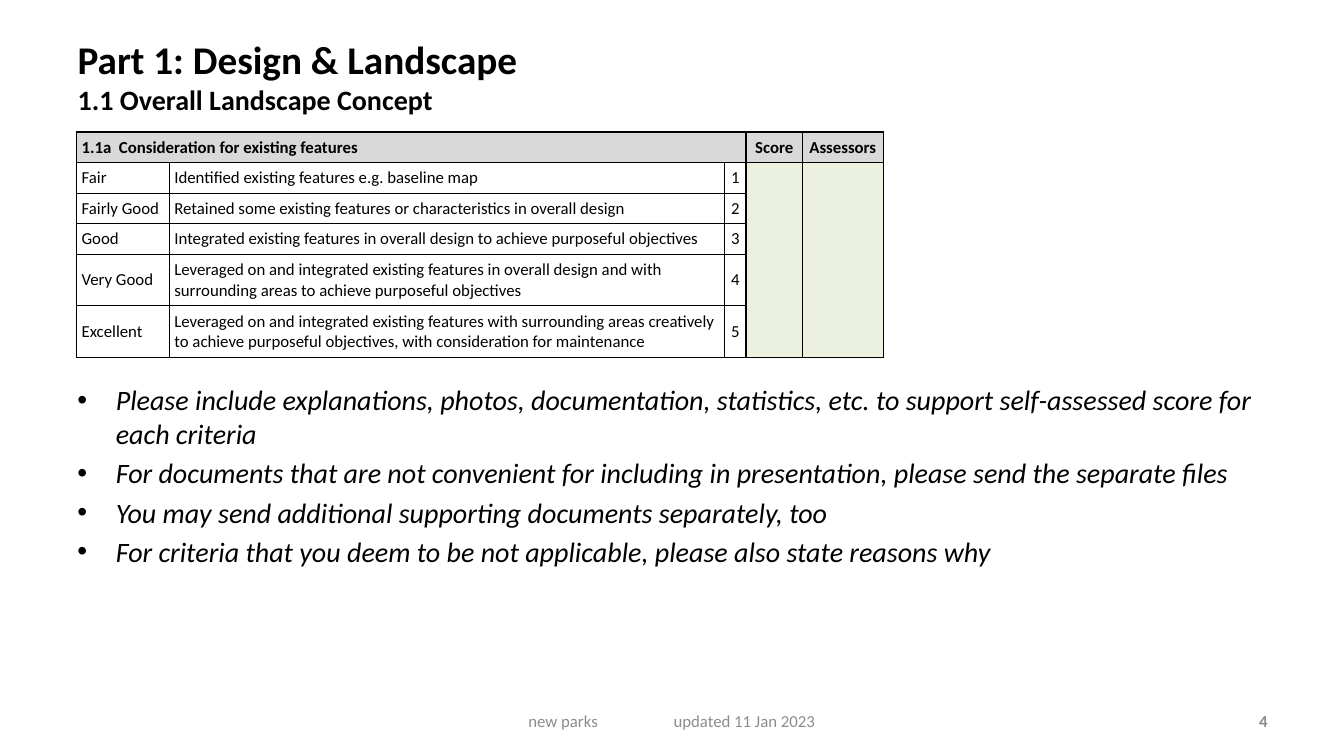
from dataclasses import dataclass
from typing import Any

import lxml.etree
import pptx
import pptx.dml.color
import pptx.enum.text
import pptx.oxml.ns
import pptx.util

Inches = pptx.util.Inches
Pt = pptx.util.Pt
Align = pptx.enum.text.PP_ALIGN
Anchor = pptx.enum.text.MSO_ANCHOR
qn = pptx.oxml.ns.qn


@dataclass(frozen=True)
class Theme:
    font: str = "Calibri"
    ink: str = "000000"
    muted: str = "8C8C8C"
    header_fill: str = "D9D9D9"
    score_fill: str = "EBF1DE"
    title_size: int = 28
    body_size: int = 20
    small_size: int = 12


@dataclass(frozen=True)
class Box:
    left: float
    top: float
    width: float
    height: float

    def lengths(self) -> tuple:
        return tuple(Inches(n) for n in (self.left, self.top, self.width, self.height))


@dataclass(frozen=True)
class Grade:
    label: str
    meaning: str
    score: int
    height: float = 0.3


THEME = Theme()
COLUMNS = (0.92, 5.51, 0.21, 0.56, 0.8)
HEADINGS = {0: "1.1a  Consideration for existing features", 3: "Score", 4: "Assessors"}
SCORE_COLUMNS = (3, 4)
HEADER_HEIGHT = 0.3
TWO_LINES = 0.51
GRADES = (
    Grade("Fair", "Identified existing features e.g. baseline map", 1),
    Grade("Fairly Good", "Retained some existing features or characteristics in overall design", 2),
    Grade("Good", "Integrated existing features in overall design to achieve purposeful objectives", 3),
    Grade("Very Good", "Leveraged on and integrated existing features in overall design and with "
          "surrounding areas to achieve purposeful objectives", 4, TWO_LINES),
    Grade("Excellent", "Leveraged on and integrated existing features with surrounding areas creatively "
          "to achieve purposeful objectives, with consideration for maintenance", 5, TWO_LINES),
)
INSTRUCTIONS = (
    "Please include explanations, photos, documentation, statistics, etc. "
    "to support self-assessed score for each criteria",
    "For documents that are not convenient for including in presentation, please send the separate files",
    "You may send additional supporting documents separately, too",
    "For criteria that you deem to be not applicable, please also state reasons why",
)


def apply(target: Any, values: dict) -> None:
    for name, value in values.items():
        setattr(target, name, value)


def add_span(para: Any, text: str, size: int, color: str = THEME.ink, **style: bool) -> None:
    span = para.add_run()
    span.text = text
    apply(span.font, {"name": THEME.font, "size": Pt(size), **style})
    span.font.color.rgb = pptx.dml.color.RGBColor.from_string(color)


def add_text_frame(page: Any, box: Box, **values: Any) -> Any:
    frame = page.shapes.add_textbox(*box.lengths()).text_frame
    apply(frame, {"word_wrap": True, **values})
    return frame


def add_title(page: Any, box: Box) -> None:
    title = page.shapes.title
    apply(title, dict(zip(("left", "top", "width", "height"), box.lengths())))
    apply(title.text_frame, {"vertical_anchor": Anchor.TOP, "word_wrap": True,
                             "auto_size": pptx.enum.text.MSO_AUTO_SIZE.NONE})
    para = title.text_frame.paragraphs[0]
    para.alignment = Align.LEFT
    add_span(para, "Part 1: Design & Landscape", THEME.title_size, bold=True)
    para.add_line_break()
    add_span(para, "1.1 Overall Landscape Concept", THEME.body_size, bold=True)


def add_borders(cell: Any) -> None:
    properties = cell._tc.get_or_add_tcPr()
    for side in ("lnL", "lnR", "lnT", "lnB"):
        line = lxml.etree.SubElement(properties, qn(f"a:{side}"), w=str(Pt(1)))
        fill = lxml.etree.SubElement(line, qn("a:solidFill"))
        lxml.etree.SubElement(fill, qn("a:srgbClr"), val=THEME.ink)


def fill_cell(cell: Any, text: str, color: str, align: Any, bold: bool) -> None:
    margins = ("margin_left", "margin_top", "margin_right", "margin_bottom")
    apply(cell, {"vertical_anchor": Anchor.MIDDLE, **dict.fromkeys(margins, Inches(0.05))})
    add_borders(cell)
    if color:
        cell.fill.solid()
        cell.fill.fore_color.rgb = pptx.dml.color.RGBColor.from_string(color)
    else:
        cell.fill.background()
    para = cell.text_frame.paragraphs[0]
    para.alignment = align
    if text:
        add_span(para, text, THEME.small_size, bold=bold)
    else:
        # An empty cell takes its line height from the end mark
        para._p.get_or_add_endParaRPr().set("sz", str(THEME.small_size * 100))


def add_grade_table(page: Any, box: Box) -> None:
    heights = (HEADER_HEIGHT, *(grade.height for grade in GRADES))
    table = page.shapes.add_table(len(heights), len(COLUMNS), *box.lengths()).table
    apply(table, {"first_row": False, "horz_banding": False})
    for column, width in zip(table.columns, COLUMNS):
        column.width = Inches(width)
    for row, height in zip(table.rows, heights):
        row.height = Inches(height)

    for index in range(len(COLUMNS)):
        align = Align.CENTER if index >= 2 else Align.LEFT
        fill_cell(table.cell(0, index), HEADINGS.get(index, ""), THEME.header_fill, align, True)
        color = THEME.score_fill if index in SCORE_COLUMNS else ""
        for number, grade in enumerate(GRADES, 1):
            texts = (grade.label, grade.meaning, str(grade.score), "", "")
            fill_cell(table.cell(number, index), texts[index], color, align, False)

    table.cell(0, 0).merge(table.cell(0, 2))
    for index in SCORE_COLUMNS:
        table.cell(1, index).merge(table.cell(len(GRADES), index))


def add_instructions(page: Any, box: Box) -> None:
    frame = add_text_frame(page, box, margin_right=Inches(0.2))
    for number, text in enumerate(INSTRUCTIONS):
        para = frame.add_paragraph() if number else frame.paragraphs[0]
        properties = para._p.get_or_add_pPr()
        properties.set("marL", str(Inches(0.38)))
        properties.set("indent", str(-Inches(0.38)))
        lxml.etree.SubElement(properties, qn("a:buFont"), typeface="Arial")
        lxml.etree.SubElement(properties, qn("a:buChar"), char="•")
        if number:
            para.space_before = Pt(4)
        add_span(para, text, THEME.body_size, italic=True)


def add_footer(page: Any, box: Box) -> None:
    frame = add_text_frame(page, box, vertical_anchor=Anchor.MIDDLE, margin_left=Inches(0.68))
    para = frame.paragraphs[0]
    tabs = lxml.etree.SubElement(para._p.get_or_add_pPr(), qn("a:tabLst"))
    lxml.etree.SubElement(tabs, qn("a:tab"), pos=str(Inches(1.44)), algn="l")
    add_span(para, "new parks\tupdated 11 Jan 2023", THEME.small_size, THEME.muted)


def add_page_number(page: Any, box: Box) -> None:
    para = add_text_frame(page, box, vertical_anchor=Anchor.MIDDLE).paragraphs[0]
    para.alignment = Align.RIGHT
    add_span(para, "4", THEME.small_size, THEME.muted, bold=True)


def main() -> None:
    deck = pptx.Presentation()
    apply(deck, {"slide_width": Inches(13.33), "slide_height": Inches(7.5)})
    page = deck.slides.add_slide(deck.slide_layouts.get_by_name("Title Only"))
    add_title(page, Box(0.67, 0.3, 10.36, 0.99))
    add_grade_table(page, Box(0.76, 1.31, 8, 2.2))
    add_instructions(page, Box(0.67, 3.75, 12.38, 2.95))
    add_footer(page, Box(4.56, 6.95, 4.22, 0.4))
    add_page_number(page, Box(9.56, 6.95, 3.11, 0.4))
    deck.save("out.pptx")


if __name__ == "__main__":
    main()
